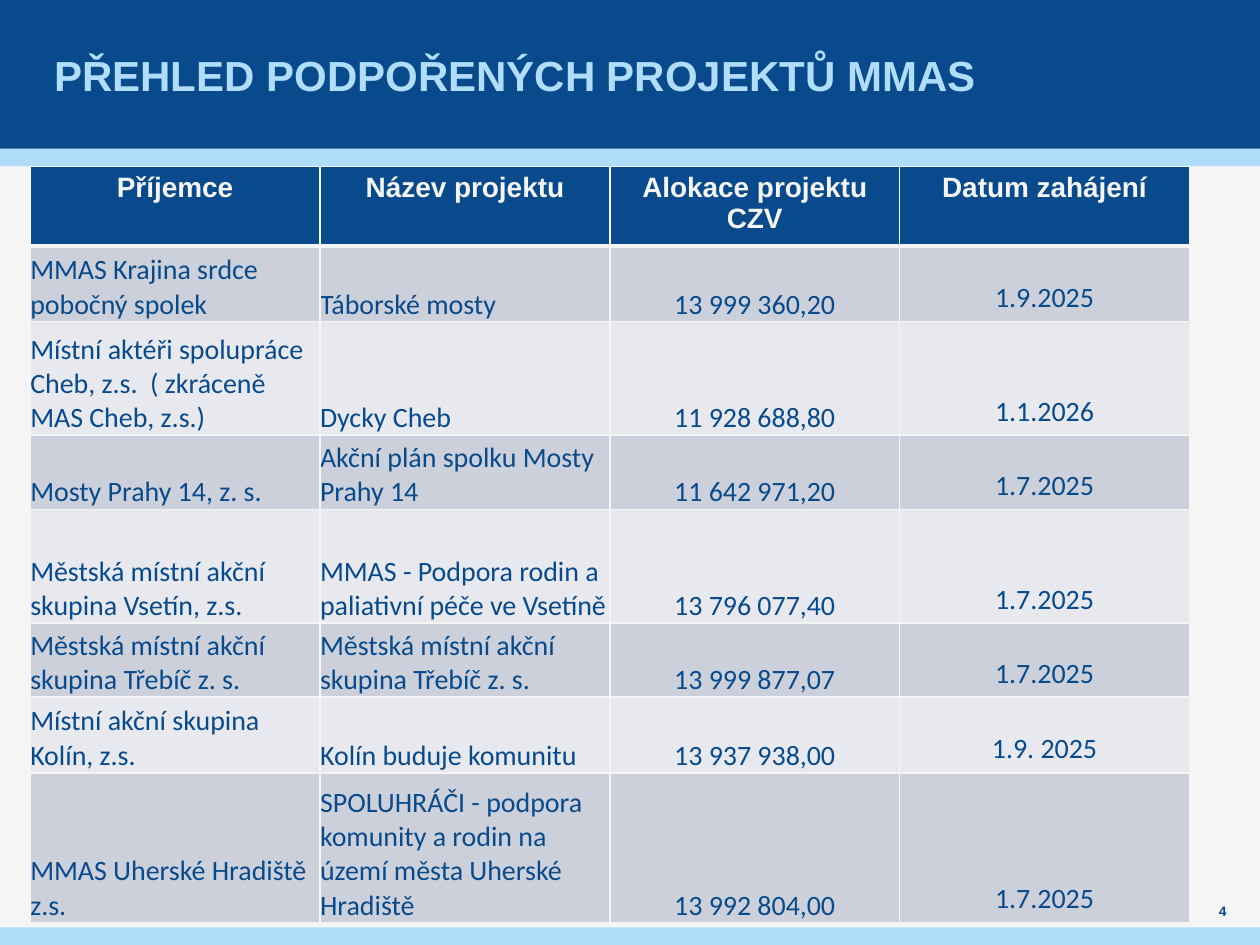
from lxml.etree import SubElement
from pptx import Presentation
from pptx.dml.color import RGBColor
from pptx.enum.shapes import MSO_SHAPE as Shape
from pptx.enum.text import MSO_ANCHOR as Anchor, MSO_AUTO_SIZE as AutoSize, PP_ALIGN as Align
from pptx.oxml.ns import qn
from pptx.util import Inches, Pt

NAVY = RGBColor(0x08, 0x4A, 0x8B)
SKY = RGBColor(0xAF, 0xDD, 0xFA)
PAPER = RGBColor(0xF5, 0xF5, 0xF5)
BAND_DARK = RGBColor(0xCC, 0xD0, 0xDA)
BAND_LIGHT = RGBColor(0xE7, 0xE9, 0xEE)

COLUMN_WIDTH = 2.3
ROW_HEIGHTS = [0.59, 0.6, 0.9, 0.59, 0.9, 0.59, 0.6, 1.19]
ROWS = [
    ("Příjemce", "Název projektu", "Alokace projektu CZV", "Datum zahájení"),
    ("MMAS Krajina srdce pobočný spolek", "Táborské mosty", "13 999 360,20", "1.9.2025"),
    ("Místní aktéři spolupráce Cheb, z.s.  ( zkráceně MAS Cheb, z.s.)", "Dycky Cheb",
     "11 928 688,80", "1.1.2026"),
    ("Mosty Prahy 14, z. s.", "Akční plán spolku Mosty Prahy 14", "11 642 971,20", "1.7.2025"),
    ("Městská místní akční skupina Vsetín, z.s.",
     "MMAS - Podpora rodin a paliativní péče ve Vsetíně", "13 796 077,40", "1.7.2025"),
    ("Městská místní akční skupina Třebíč z. s.", "Městská místní akční skupina Třebíč z. s.",
     "13 999 877,07", "1.7.2025"),
    ("Místní akční skupina Kolín, z.s.", "Kolín buduje komunitu", "13 937 938,00", "1.9. 2025"),
    ("MMAS Uherské Hradiště z.s.",
     "SPOLUHRÁČI - podpora komunity a rodin na území města Uherské Hradiště",
     "13 992 804,00", "1.7.2025"),
]


def write(frame, text, size, color, font="Arial", bold=True, align=Align.LEFT):
    para = frame.paragraphs[0]
    para.alignment = align
    span = para.add_run()
    span.text = text
    span.font.name = font
    span.font.size = Pt(size)
    span.font.bold = bold
    span.font.color.rgb = color


def set_margins(target, side=0.0):
    target.margin_left = target.margin_right = Inches(side)
    target.margin_top = target.margin_bottom = 0


def add_bar(page, top, height, color):
    bar = page.shapes.add_shape(Shape.RECTANGLE, 0, Inches(top), Inches(10), Inches(height))
    bar.shadow.inherit = False
    bar.fill.solid()
    bar.fill.fore_color.rgb = color
    bar.line.fill.background()


def add_title(page, text):
    title = page.shapes.title
    title.left, title.top = Inches(0.39), 0
    title.width, title.height = Inches(9.21), Inches(1.18)
    frame = title.text_frame
    frame.auto_size = AutoSize.NONE
    frame.word_wrap = True
    frame.vertical_anchor = Anchor.MIDDLE
    set_margins(frame, 0.04)
    write(frame, text, 24, SKY)
    # Bring the title in front of the header bars
    title.element.getparent().append(title.element)


def add_page_number(page, number):
    box = page.shapes.add_textbox(Inches(9.45), Inches(7.13), Inches(0.51), Inches(0.2))
    frame = box.text_frame
    frame.word_wrap = True
    frame.vertical_anchor = Anchor.MIDDLE
    set_margins(frame)
    write(frame, number, 7.9, NAVY, align=Align.CENTER)


def set_borders(cell, top, bottom):
    properties = cell._tc.get_or_add_tcPr()
    for side, width in (("L", 1), ("R", 1), ("T", top), ("B", bottom)):
        line = SubElement(properties, qn(f"a:ln{side}"), w=str(Pt(width)))
        fill = SubElement(line, qn("a:solidFill"))
        SubElement(fill, qn("a:srgbClr"), val=str(PAPER))


def format_cell(cell, row, column, text):
    header = row == 0
    set_borders(cell, top=3 if row == 1 else 1, bottom=3 if header else 1)
    cell.fill.solid()
    if header:
        cell.fill.fore_color.rgb = NAVY
        write(cell.text_frame, text, 16, PAPER, align=Align.CENTER)
        return
    cell.fill.fore_color.rgb = BAND_DARK if row % 2 else BAND_LIGHT
    cell.vertical_anchor = Anchor.BOTTOM
    if column < 3:
        set_margins(cell)
    align = Align.LEFT if column < 2 else Align.CENTER
    write(cell.text_frame, text, 16, NAVY, "Calibri", False, align)


def add_project_table(page):
    columns = len(ROWS[0])
    table = page.shapes.add_table(
        len(ROWS), columns, Inches(0.24), Inches(1.32),
        Inches(COLUMN_WIDTH * columns), Inches(sum(ROW_HEIGHTS))).table
    for column in table.columns:
        column.width = Inches(COLUMN_WIDTH)
    for row, (height, texts) in enumerate(zip(ROW_HEIGHTS, ROWS)):
        table.rows[row].height = Inches(height)
        for column, text in enumerate(texts):
            format_cell(table.cell(row, column), row, column, text)


def main():
    deck = Presentation()
    deck.slide_width, deck.slide_height = Inches(10), Inches(7.5)
    page = deck.slides.add_slide(deck.slide_layouts[5])
    page.background.fill.solid()
    page.background.fill.fore_color.rgb = PAPER

    # Header and footer bars
    add_bar(page, 1.18, 0.14, SKY)
    add_bar(page, 0, 1.18, NAVY)
    add_bar(page, 7.36, 0.14, SKY)

    # Content
    add_title(page, "PŘEHLED PODPOŘENÝCH PROJEKTŮ MMAS")
    add_page_number(page, "4")
    add_project_table(page)
    deck.save("out.pptx")


if __name__ == "__main__":
    main()
